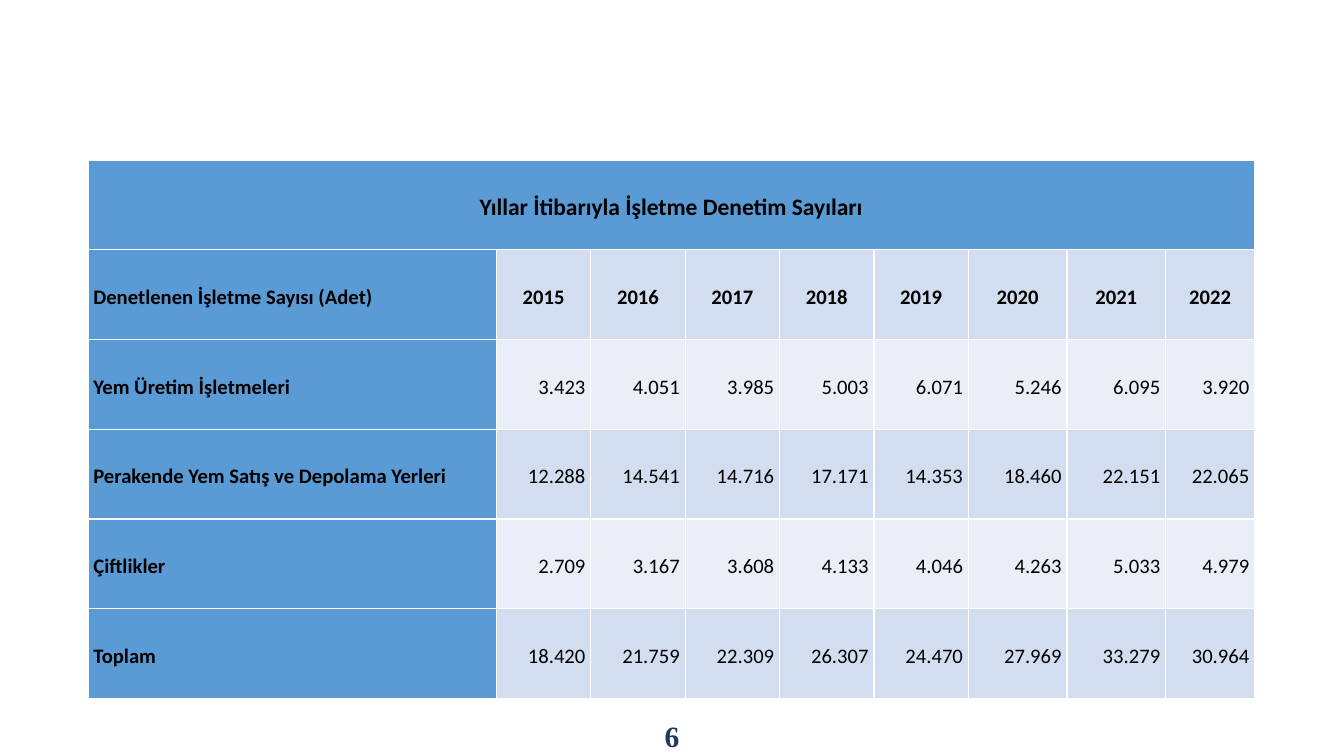
from dataclasses import dataclass

import pptx
import pptx.dml.color
import pptx.enum.text
import pptx.util

ALIGN = pptx.enum.text.PP_ALIGN
MIDDLE = pptx.enum.text.MSO_ANCHOR.MIDDLE
Inches = pptx.util.Inches
rgb = pptx.dml.color.RGBColor.from_string


@dataclass(frozen=True)
class Theme:
    heading_fill: str = "5B9BD5"
    dark_band: str = "D2DEEF"
    light_band: str = "EAEFF7"
    ink: str = "000000"
    page_ink: str = "203864"
    font: str = "Calibri"
    page_font: str = "Times New Roman"
    heading_size: int = 16
    body_size: int = 14
    page_size: int = 20


theme = Theme()


def write(frame, text, align=ALIGN.LEFT, size=theme.body_size, bold=True,
          font=theme.font, color=theme.ink, line_spacing=1.2):
    paragraph = frame.paragraphs[0]
    paragraph.text = text
    paragraph.alignment = align
    paragraph.line_spacing = line_spacing
    paragraph.font.size = pptx.util.Pt(size)
    paragraph.font.bold = bold
    paragraph.font.name = font
    paragraph.font.color.rgb = rgb(color)


heading = "Yıllar İtibarıyla İşletme Denetim Sayıları"
audits = [
    ["Denetlenen İşletme Sayısı (Adet)", *map(str, range(2015, 2023))],
    ["Yem Üretim İşletmeleri",
     "3.423", "4.051", "3.985", "5.003", "6.071", "5.246", "6.095", "3.920"],
    ["Perakende Yem Satış ve Depolama Yerleri",
     "12.288", "14.541", "14.716", "17.171", "14.353", "18.460", "22.151", "22.065"],
    ["Çiftlikler",
     "2.709", "3.167", "3.608", "4.133", "4.046", "4.263", "5.033", "4.979"],
    ["Toplam",
     "18.420", "21.759", "22.309", "26.307", "24.470", "27.969", "33.279", "30.964"],
]
column_widths = [3.85] + [0.89] * 5 + [0.93] * 2 + [0.84]
row_count = len(audits) + 1
table_height = 5.08

presentation = pptx.Presentation()
presentation.slide_width = Inches(12.67)
presentation.slide_height = Inches(7.13)
slide = presentation.slides.add_slide(presentation.slide_layouts[6])

# The default table style supplies the white rules and the thicker one under the heading.
audit_table = slide.shapes.add_table(
    row_count, len(column_widths), Inches(0.83), Inches(1.51),
    Inches(sum(column_widths)), Inches(table_height)).table
audit_table.first_col = True
for column, width in zip(audit_table.columns, column_widths):
    column.width = Inches(width)
for row in audit_table.rows:
    row.height = Inches(table_height / row_count)

for cell in audit_table.iter_cells():
    cell.vertical_anchor = MIDDLE
    cell.margin_left = cell.margin_right = Inches(0.05)
    cell.margin_top = cell.margin_bottom = 0
    cell.fill.solid()
    cell.fill.fore_color.rgb = rgb(theme.heading_fill)

heading_cell = audit_table.cell(0, 0)
heading_cell.merge(audit_table.cell(0, len(column_widths) - 1))
write(heading_cell.text_frame, heading, align=ALIGN.CENTER, size=theme.heading_size)

for row_index, (category, *values) in enumerate(audits, start=1):
    write(audit_table.cell(row_index, 0).text_frame, category)
    is_years = row_index == 1
    for column_index, value in enumerate(values, start=1):
        cell = audit_table.cell(row_index, column_index)
        band = theme.dark_band if row_index % 2 else theme.light_band
        cell.fill.fore_color.rgb = rgb(band)
        write(cell.text_frame, value, bold=is_years,
              align=ALIGN.CENTER if is_years else ALIGN.RIGHT)

page_number = slide.shapes.add_textbox(
    Inches(4.91), Inches(6.75), Inches(2.85), Inches(0.38)).text_frame
page_number.word_wrap = True
page_number.vertical_anchor = MIDDLE
write(page_number, "6", align=ALIGN.CENTER, size=theme.page_size,
      font=theme.page_font, color=theme.page_ink, line_spacing=1.0)

presentation.save("out.pptx")
